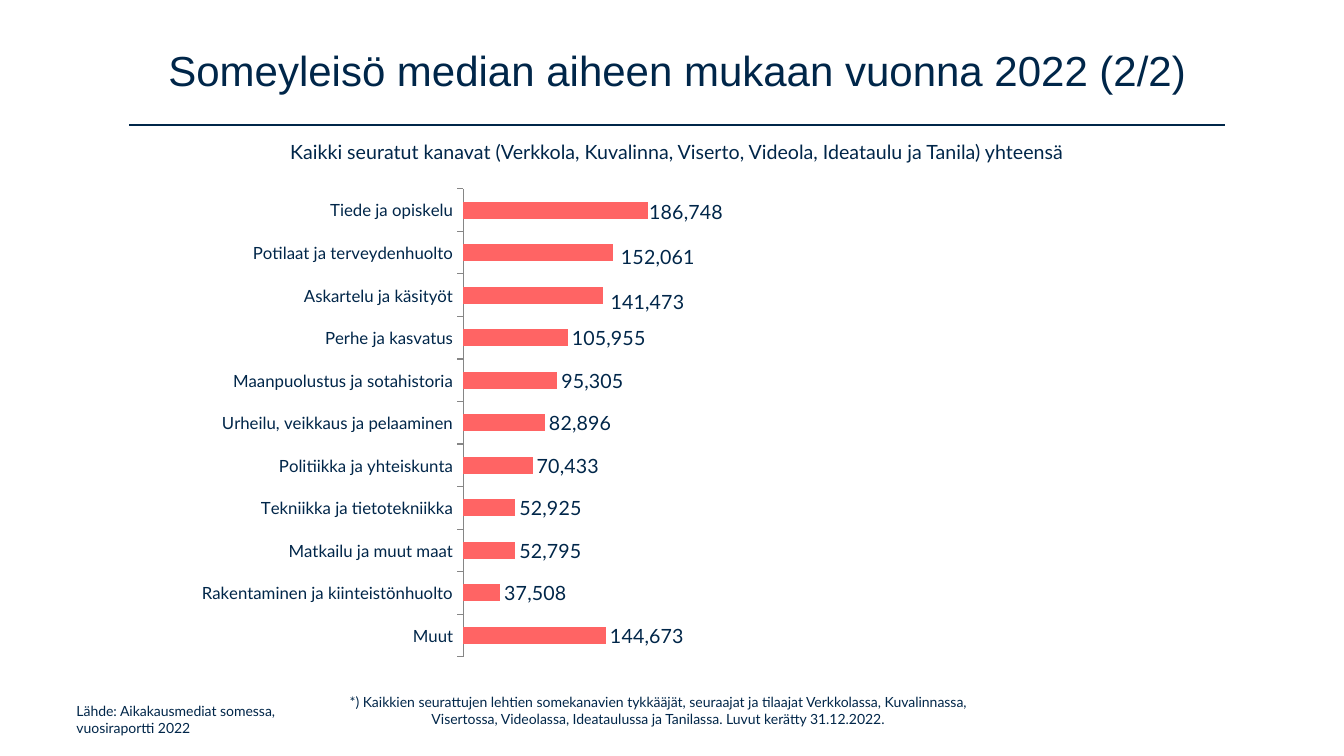
import dataclasses

import lxml.etree
import pptx
import pptx.chart.data
import pptx.dml.color
import pptx.enum.chart
import pptx.enum.shapes
import pptx.enum.text
import pptx.oxml.ns
import pptx.util

ALIGN = pptx.enum.text.PP_ALIGN
qn = pptx.oxml.ns.qn


@dataclasses.dataclass(frozen=True)
class Theme:
    ink: str = "002649"
    bar: str = "FF6464"
    axis: str = "868686"
    heading_font: str = "Arial"
    body_font: str = "Lato"
    title_size: int = 30
    label_size: int = 14
    category_size: int = 12
    note_size: int = 10


def rgb(value):
    return pptx.dml.color.RGBColor.from_string(value)


def add_layout(parent, index, **settings):
    """Place a manual chart layout among the parent's children."""
    for old in parent.findall(qn("c:layout")):
        parent.remove(old)
    layout = lxml.etree.Element(qn("c:layout"))
    manual = lxml.etree.SubElement(layout, qn("c:manualLayout"))
    for name, value in settings.items():
        lxml.etree.SubElement(manual, qn(f"c:{name}")).set("val", str(value))
    parent.insert(index, layout)


class SlideBuilder:
    """Lengths are percentages of the slide's width and height."""

    def __init__(self, presentation, theme):
        self.theme = theme
        self.width = presentation.slide_width
        self.height = presentation.slide_height
        self.slide = presentation.slides.add_slide(presentation.slide_layouts[5])

    def box(self, left, top, width, height):
        return (round(self.width * left / 100), round(self.height * top / 100),
                round(self.width * width / 100), round(self.height * height / 100))

    def style(self, font, size, name=None):
        font.name = name or self.theme.body_font
        font.size = pptx.util.Pt(size)
        font.color.rgb = rgb(self.theme.ink)

    def fill_text(self, frame, lines, size, align, name=None):
        frame.word_wrap = True
        paragraph = frame.paragraphs[0]
        paragraph.alignment = align
        for number, line in enumerate(lines):
            if number:
                paragraph.add_line_break()
            run = paragraph.add_run()
            run.text = line
            self.style(run.font, size, name)
        return paragraph

    def title(self, area, text):
        shape = self.slide.shapes.title
        shape.left, shape.top, shape.width, shape.height = self.box(*area)
        frame = shape.text_frame
        frame.auto_size = pptx.enum.text.MSO_AUTO_SIZE.NONE
        frame.vertical_anchor = pptx.enum.text.MSO_ANCHOR.MIDDLE
        paragraph = self.fill_text(frame, [text], self.theme.title_size,
                                   ALIGN.CENTER, self.theme.heading_font)
        paragraph.line_spacing = 0.9

    def text(self, area, lines, size, align=ALIGN.CENTER):
        shape = self.slide.shapes.add_textbox(*self.box(*area))
        self.fill_text(shape.text_frame, lines, size, align)
        shape.text_frame.auto_size = pptx.enum.text.MSO_AUTO_SIZE.SHAPE_TO_FIT_TEXT

    def rule(self, left, top, width):
        x, y, length, _ = self.box(left, top, width, 0)
        line = self.slide.shapes.add_connector(
            pptx.enum.shapes.MSO_CONNECTOR.STRAIGHT, x, y, x + length, y)
        line.line.color.rgb = rgb(self.theme.ink)
        line.line.width = pptx.util.Pt(1)
        properties = line._element.find(qn("p:spPr"))
        lxml.etree.SubElement(properties, qn("a:effectLst"))

    def bar_chart(self, area, audience, maximum, plot_area, label_shifts):
        data = pptx.chart.data.CategoryChartData(number_format="#,##0")
        data.categories = list(audience)
        data.add_series("Series 1", list(audience.values()))
        chart = self.slide.shapes.add_chart(
            pptx.enum.chart.XL_CHART_TYPE.BAR_CLUSTERED, *self.box(*area), data).chart
        chart.has_legend = False
        chart.has_title = False
        self.style(chart.font, self.theme.label_size)
        x, y, w, h = plot_area
        add_layout(chart._chartSpace.chart.plotArea, 0, layoutTarget="inner",
                   xMode="edge", yMode="edge", x=x, y=y, w=w, h=h)

        # Axes
        categories = chart.category_axis
        categories.reverse_order = True
        categories.has_major_gridlines = False
        categories.major_tick_mark = pptx.enum.chart.XL_TICK_MARK.OUTSIDE
        categories.format.line.color.rgb = rgb(self.theme.axis)
        categories.format.line.width = pptx.util.Pt(0.75)
        self.style(categories.tick_labels.font, self.theme.category_size)
        values = chart.value_axis
        values.minimum_scale, values.maximum_scale = 0, maximum
        values.has_major_gridlines = False
        values.visible = False

        # Bars and their labels
        plot = chart.plots[0]
        plot.gap_width = 150
        plot.vary_by_categories = False
        series = plot.series[0]
        series.format.fill.solid()
        series.format.fill.fore_color.rgb = rgb(self.theme.bar)
        labels = series.data_labels
        labels.show_value = True
        labels.number_format = "#,##0"
        labels.number_format_is_linked = False
        labels.position = pptx.enum.chart.XL_LABEL_POSITION.OUTSIDE_END
        self.style(labels.font, self.theme.label_size)
        for number, (across, down) in enumerate(label_shifts):
            label = series.points[number].data_label
            self.style(label.font, self.theme.label_size)
            label.position = pptx.enum.chart.XL_LABEL_POSITION.OUTSIDE_END
            element = labels._element.findall(qn("c:dLbl"))[number]
            add_layout(element, 1, x=across, y=down)


AUDIENCE = {
    "Tiede ja opiskelu": 186748,
    "Potilaat ja terveydenhuolto": 152061,
    "Askartelu ja käsityöt": 141473,
    "Perhe ja kasvatus": 105955,
    "Maanpuolustus ja sotahistoria": 95305,
    "Urheilu, veikkaus ja pelaaminen": 82896,
    "Politiikka ja yhteiskunta": 70433,
    "Tekniikka ja tietotekniikka": 52925,
    "Matkailu ja muut maat": 52795,
    "Rakentaminen ja kiinteistönhuolto": 37508,
    "Muut": 144673,
}


def main():
    presentation = pptx.Presentation()
    presentation.slide_width = pptx.util.Inches(13.33)
    presentation.slide_height = pptx.util.Inches(7.5)
    theme = Theme()
    builder = SlideBuilder(presentation, theme)

    # Heading
    builder.title((6.9, 2.8, 87.02, 13.6),
                  "Someyleisö median aiheen mukaan vuonna 2022 (2/2)")
    builder.rule(9.6, 16.53, 81.55)
    builder.text((9.6, 17.87, 81.55, 4.53),
                 ["Kaikki seuratut kanavat (Verkkola, Kuvalinna, Viserto, Videola, "
                  "Ideataulu ja Tanila) yhteensä"], theme.label_size)

    # Audience by topic
    builder.bar_chart((3.38, 22.8, 91.15, 66.27), AUDIENCE, 800000,
                      plot_area=(0.341, 0.033, 0.645, 0.934),
                      label_shifts=[(-0.002, 0.004), (0.003, 0.008), (0.003, 0.013)])

    # Source and footnote
    builder.text((4.95, 92.27, 49.36, 5.87),
                 ["Lähde: Aikakausmediat somessa,", "vuosiraportti 2022"],
                 theme.note_size, ALIGN.LEFT)
    builder.text((25.21, 91.07, 47.49, 5.87),
                 ["*) Kaikkien seurattujen lehtien somekanavien tykkääjät, seuraajat ja "
                  "tilaajat Verkkolassa, Kuvalinnassa, Visertossa, Videolassa, "
                  "Ideataulussa ja Tanilassa. Luvut kerätty 31.12.2022."],
                 theme.note_size)

    presentation.save("out.pptx")


if __name__ == "__main__":
    main()
